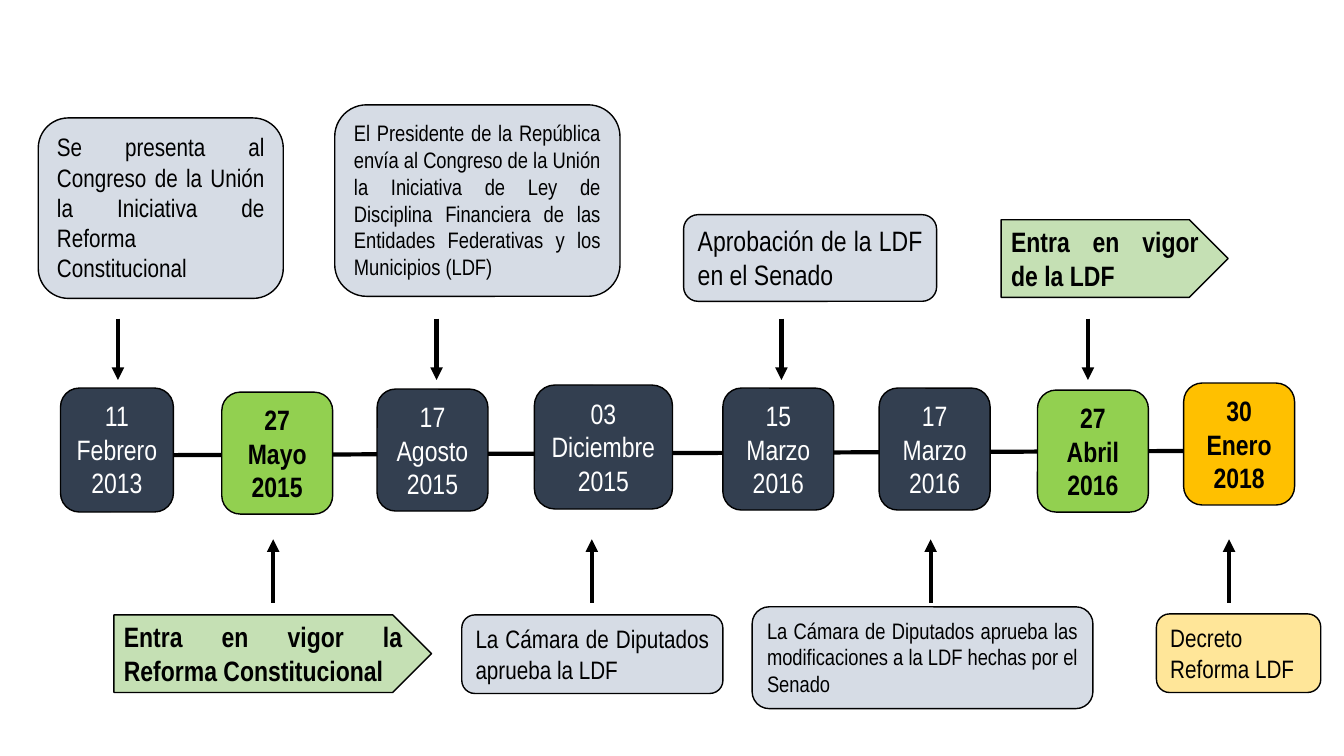
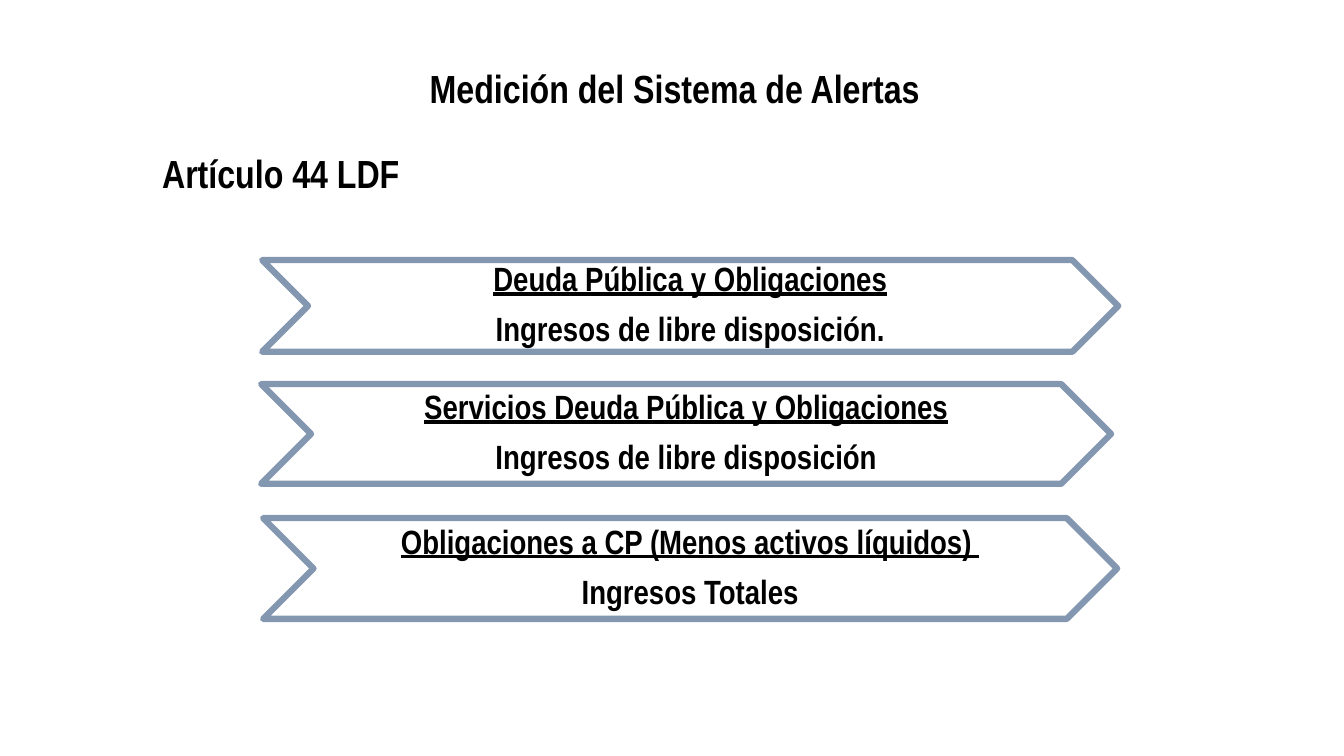
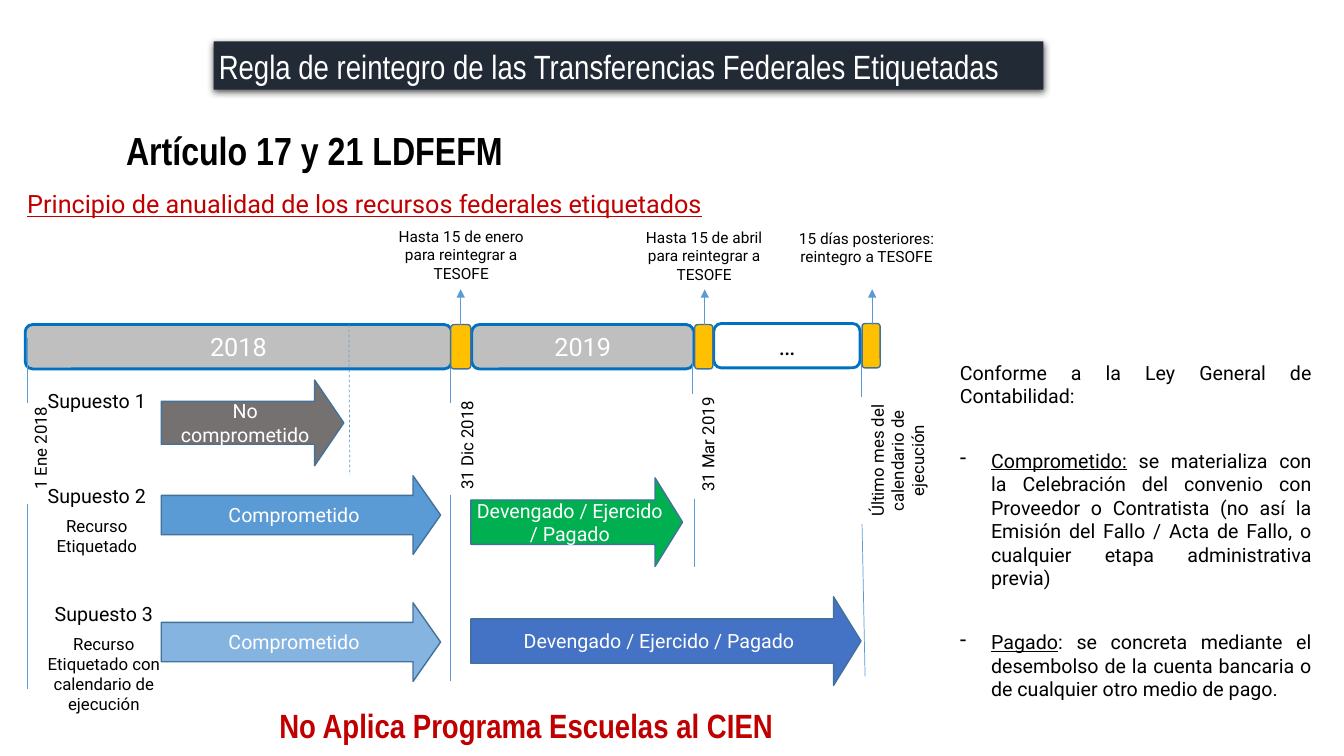
from dataclasses import dataclass, replace

from lxml import etree
from pptx import Presentation
from pptx.dml.color import RGBColor
from pptx.enum import dml, shapes, text
from pptx.oxml.ns import qn
from pptx.util import Inches, Pt

SHAPE = shapes.MSO_SHAPE
LEFT, CENTER, JUSTIFY = text.PP_ALIGN.LEFT, text.PP_ALIGN.CENTER, text.PP_ALIGN.JUSTIFY
TOP, MIDDLE = text.MSO_ANCHOR.TOP, text.MSO_ANCHOR.MIDDLE


@dataclass(frozen=True)
class Style:
    font: str
    size: float
    color: str = "000000"
    bold: bool = False
    underline: bool = False


class Theme:
    black, white, red = "000000", "FFFFFF", "C00000"
    navy, mist, green, leaf = "333F50", "D6DCE5", "92D050", "C5E0B4"
    amber, cream, steel, ink = "FFC000", "FFE699", "8497B0", "222A35"
    bar, bar_line, outline, thin_line = "BFBFBF", "0070C0", "42719B", "5B9BD5"
    gray, blue, light_blue = "767171", "5B9BD5", "84B4DF"
    vivid_green, royal = "00B050", "4472C4"

    date = Style("Arial Narrow", 20, white)
    strong = Style("Arial Narrow", 20, bold=True)
    note = Style("Arial Narrow", 18)
    heading = Style("Arial Narrow", 28, bold=True)
    formula = Style("Arial Narrow", 24, bold=True)
    banner = Style("Arial Narrow", 24, white)
    warning = Style("Arial Narrow", 24, red, bold=True)
    principle = Style("Roboto", 18, red, underline=True)
    year = Style("Roboto", 18, white)
    stage = Style("Roboto", 14, white)
    body = Style("Roboto", 14)
    small = Style("Roboto", 12)
    deadline = Style("Roboto", 11)


def rgb(color):
    return RGBColor.from_string(color)


def write(shape, lines, align=LEFT, anchor=TOP, margins=(0.1, 0.05), gap=0):
    """Fill a shape with lines, each a list of (text, style) runs; gap is the space before."""
    frame = shape.text_frame
    frame.word_wrap = True
    frame.vertical_anchor = anchor
    frame.margin_left = frame.margin_right = Inches(margins[0])
    frame.margin_top = frame.margin_bottom = Inches(margins[1])
    for index, runs in enumerate(lines):
        paragraph = frame.paragraphs[0] if index == 0 else frame.add_paragraph()
        paragraph.alignment = align
        if index and gap:
            paragraph.space_before = Pt(gap)
        for words, style in runs:
            run = paragraph.add_run()
            run.text = words
            run.font.name, run.font.size = style.font, Pt(style.size)
            run.font.bold, run.font.underline = style.bold, style.underline
            run.font.color.rgb = rgb(style.color)


def add_box(slide, kind, box, fill=None, line=None, width=1):
    shape = slide.shapes.add_shape(kind, *map(Inches, box))
    shape.shadow.inherit = False
    if fill:
        shape.fill.solid()
        shape.fill.fore_color.rgb = rgb(fill)
    else:
        shape.fill.background()
    if line:
        shape.line.color.rgb = rgb(line)
        shape.line.width = Pt(width)
    else:
        shape.line.fill.background()
    return shape


def add_label(slide, box, lines, align=LEFT, anchor=TOP, margins=(0.05, 0.05), gap=0, rotation=0):
    label = slide.shapes.add_textbox(*map(Inches, box))
    label.rotation = rotation
    write(label, lines, align, anchor, margins, gap)
    return label


def add_line(slide, start, end, color, width, arrow=False, dashed=False):
    line = slide.shapes.add_connector(
        shapes.MSO_CONNECTOR.STRAIGHT, *map(Inches, (*start, *end)))
    line.line.color.rgb = rgb(color)
    line.line.width = Pt(width)
    if dashed:
        line.line.dash_style = dml.MSO_LINE.DASH
    if arrow:
        etree.SubElement(line.line._get_or_add_ln(), qn("a:tailEnd"), type="triangle")
    etree.SubElement(line._element.spPr, qn("a:effectLst"))


def add_drop_shadow(shape):
    effects = shape._element.spPr.find(qn("a:effectLst"))
    shadow = etree.SubElement(effects, qn("a:outerShdw"), blurRad=str(Pt(5)),
                              dist=str(Pt(1.5)), dir="5400000", rotWithShape="0")
    color = etree.SubElement(shadow, qn("a:srgbClr"), val=Theme.black)
    etree.SubElement(color, qn("a:alpha"), val="63000")


def add_dash_bullet(paragraph, indent):
    properties = paragraph._p.get_or_add_pPr()
    properties.set("marL", str(Inches(indent)))
    properties.set("indent", str(-Inches(indent)))
    etree.SubElement(properties, qn("a:buChar"), char="-")


def add_event(slide, date, date_box, date_fill, note, note_box, note_fill, size, arrow_x):
    """Place a dated box, its note and the arrow from note to date."""
    milestone = date_fill != Theme.navy
    add_line_y = (3.16, 3.77) if note_box[1] < date_box[1] else (5.98, 5.35)
    dated = add_box(slide, SHAPE.ROUNDED_RECTANGLE, date_box, date_fill, Theme.black)
    write(dated, [[(date, Theme.strong if milestone else Theme.date)]], CENTER)
    in_force = note_fill == Theme.leaf
    kind = SHAPE.PENTAGON if in_force else SHAPE.ROUNDED_RECTANGLE
    noted = add_box(slide, kind, note_box, note_fill, Theme.black)
    style = Theme.strong if in_force else replace(Theme.note, size=size)
    write(noted, [[(note, style)]], JUSTIFY)
    start, end = add_line_y
    add_line(slide, (arrow_x, start), (arrow_x, end), Theme.black, 3, arrow=True)


def build_timeline(slide):
    add_line(slide, (0.6, 4.52), (12.83, 4.47), Theme.black, 3)
    events = [
        ("11 Febrero 2013", (0.6, 3.85, 1.12, 1.23), Theme.navy,
         "Se presenta al Congreso de la Unión la Iniciativa de Reforma Constitucional",
         (0.38, 1.17, 2.43, 1.79), Theme.mist, 18, 1.17),
        ("27 Mayo 2015", (2.2, 3.89, 1.1, 1.21), Theme.green,
         "Entra en vigor la Reforma Constitucional",
         (1.13, 6.1, 3.15, 0.77), Theme.leaf, 20, 2.71),
        ("17 Agosto 2015", (3.74, 3.86, 1.1, 1.21), Theme.navy,
         "El Presidente de la República envía al Congreso de la Unión la Iniciativa de Ley "
         "de Disciplina Financiera de las Entidades Federativas y los Municipios (LDF)",
         (3.32, 1.04, 2.83, 1.9), Theme.mist, 16, 4.33),
        ("03 Diciembre 2015", (5.3, 3.82, 1.37, 1.23), Theme.navy,
         "La Cámara de Diputados aprueba la LDF",
         (4.58, 6.1, 2.59, 0.78), Theme.mist, 18, 5.87),
        ("15 Marzo 2016", (7.17, 3.85, 1.1, 1.21), Theme.navy,
         "Aprobación de la LDF en el Senado",
         (6.78, 2.13, 2.51, 0.86), Theme.mist, 20, 7.75),
        ("17 Marzo 2016", (8.72, 3.85, 1.1, 1.21), Theme.navy,
         "La Cámara de Diputados aprueba las modificaciones a la LDF hechas por el Senado",
         (7.46, 6.02, 3.38, 1.01), Theme.mist, 16, 9.23),
        ("27 Abril 2016", (10.29, 3.87, 1.1, 1.21), Theme.green,
         "Entra en vigor de la LDF",
         (9.93, 2.18, 2.25, 0.77), Theme.leaf, 20, 10.79),
        ("30 Enero 2018", (11.74, 3.8, 1.1, 1.21), Theme.amber,
         "Decreto Reforma LDF",
         (11.47, 6.09, 1.63, 0.78), Theme.cream, 18, 12.19),
    ]
    for event in events:
        add_event(slide, *event)


def build_alert_measures(slide):
    add_label(slide, (2.59, 0.56, 8.2, 0.63),
              [[("Medición del Sistema de Alertas", Theme.heading)]], CENTER, MIDDLE)
    add_label(slide, (1.51, 1.43, 4.13, 0.57),
              [[("Artículo 44 LDF", Theme.heading)]], margins=(0.1, 0.05))
    ratios = [
        ("Deuda Pública y Obligaciones", "Ingresos de libre disposición.",
         (2.6, 2.58, 8.49, 0.91)),
        ("Servicios Deuda Pública y Obligaciones", "Ingresos de libre disposición",
         (2.59, 3.81, 8.43, 0.99)),
        ("Obligaciones a CP (Menos activos líquidos) ", "Ingresos Totales",
         (2.61, 5.14, 8.47, 1)),
    ]
    for numerator, denominator, box in ratios:
        chevron = add_box(slide, SHAPE.CHEVRON, box, line=Theme.steel, width=4.5)
        write(chevron, [[(numerator, replace(Theme.formula, underline=True))],
                        [(denominator, Theme.formula)]], CENTER, MIDDLE, (0.02, 0.02))
        for paragraph in chevron.text_frame.paragraphs:
            paragraph.line_spacing = 0.9
            paragraph.space_after = Pt(9.6)


def add_period_bars(slide):
    periods = [("2018", (0.25, 3.22, 4.23, 0.44), Theme.bar, Theme.white),
               ("2019", (4.68, 3.22, 2.2, 0.44), Theme.bar, Theme.white),
               ("…", (7.08, 3.21, 1.45, 0.44), None, Theme.black)]
    for name, box, fill, color in periods:
        bar = add_box(slide, SHAPE.ROUNDED_RECTANGLE, box, fill, Theme.bar_line, 2)
        write(bar, [[(name, replace(Theme.year, color=color))]], CENTER, MIDDLE, (0.05, 0.05))
    ticks = [((0.27, 3.35), (0.27, 4)), ((0.27, 5), (0.27, 6.84)),
             ((4.47, 3.36), (4.47, 4)), ((4.47, 4.91), (4.47, 6.76)),
             ((6.87, 3.28), (6.87, 3.91)), ((6.89, 4.95), (6.89, 5.63)),
             ((8.54, 3.31), (8.54, 3.94)), ((8.55, 5.2), (8.58, 6.71))]
    for start, end in ticks:
        add_line(slide, start, end, Theme.thin_line, 0.5)
    dates = [("1 Ene 2018", (-0.18, 4.19, 1.15, 0.29), LEFT),
             ("31 Dic 2018", (4.05, 4.19, 1.15, 0.29), LEFT),
             ("31 Mar 2019", (6.44, 4.21, 1.15, 0.29), LEFT),
             ("Último mes del calendario de ejecución", (8.26, 4.23, 1.26, 0.68), CENTER)]
    for date, box, align in dates:
        add_label(slide, box, [[(date, Theme.small)]], align, rotation=270)


def add_deadlines(slide):
    deadlines = [
        ("Hasta 15 de enero para reintegrar a TESOFE", (3.82, 2.2, 1.51, 0.6),
         (4.47, 3.22, 0.2, 0.44), 4.57),
        ("Hasta 15 de abril para reintegrar a TESOFE", (6.23, 2.21, 1.51, 0.6),
         (6.89, 3.22, 0.18, 0.44), 6.99),
        ("15 días posteriores: reintegro a TESOFE", (7.84, 2.22, 1.51, 0.43),
         (8.55, 3.21, 0.18, 0.44), 8.65),
    ]
    for words, label_box, marker_box, arrow_x in deadlines:
        add_box(slide, SHAPE.ROUNDED_RECTANGLE, marker_box, Theme.amber, Theme.outline)
        add_line(slide, (arrow_x, 3.22), (arrow_x, 2.87), Theme.thin_line, 0.5, arrow=True)
        add_label(slide, label_box, [[(words, Theme.deadline)]], CENTER)


def add_cases(slide):
    cases = [("Supuesto 1", None, (0.35, 3.81, 1.22, 0.32)),
             ("Supuesto 2", "Recurso Etiquetado", (0.35, 4.75, 1.22, 0.79)),
             ("Supuesto 3", "Recurso Etiquetado con calendario de ejecución",
              (0.42, 5.92, 1.22, 1.18))]
    for name, detail, box in cases:
        lines = [[(name, Theme.body)]]
        if detail:
            lines.append([(detail, Theme.small)])
        add_label(slide, box, lines, CENTER, gap=6)
    stages = [
        ("No comprometido", (1.6, 3.77, 1.81, 0.85), Theme.gray, 0.34),
        ("Comprometido", (1.6, 4.72, 2.77, 0.78), Theme.blue, 0.35),
        ("Devengado / Ejercido / Pagado", (4.67, 4.74, 2.1, 0.88), Theme.vivid_green, 0.31),
        ("Comprometido", (1.6, 5.98, 2.77, 0.78), Theme.light_blue, 0.35),
        ("Devengado / Ejercido / Pagado", (4.67, 5.92, 3.87, 0.88), Theme.royal, 0.31),
    ]
    for name, box, fill, head in stages:
        arrow = add_box(slide, SHAPE.RIGHT_ARROW, box, fill, Theme.outline)
        arrow.adjustments[1] = head
        write(arrow, [[(name, Theme.stage)]], CENTER, MIDDLE, (0.05, 0.05))
    add_line(slide, (3.46, 3.22), (3.47, 4.71), Theme.thin_line, 0.5, dashed=True)


def add_definitions(slide):
    term = replace(Theme.body, underline=True)
    lines = [
        [("Conforme a la Ley General de Contabilidad:", Theme.body)],
        [("Comprometido:", term),
         (" se materializa con la Celebración del convenio con Proveedor o Contratista "
          "(no así la Emisión del Fallo / Acta de Fallo, o cualquier etapa administrativa "
          "previa)", Theme.body)],
        [("Pagado", term),
         (": se concreta mediante el desembolso de la cuenta bancaria o de cualquier otro "
          "medio de pago.", Theme.body)],
    ]
    label = add_label(slide, (9.47, 3.53, 3.59, 3.5), lines, JUSTIFY, gap=29)
    for paragraph in label.text_frame.paragraphs[1:]:
        add_dash_bullet(paragraph, 0.31)


def build_refund_rule(slide):
    banner = add_box(slide, SHAPE.RECTANGLE, (2.12, 0.41, 8.23, 0.48), Theme.ink)
    add_drop_shadow(banner)
    write(banner, [[("Regla de reintegro de las Transferencias Federales Etiquetadas",
                     Theme.banner)]], margins=(0.05, 0.05))
    add_label(slide, (1.2, 1.2, 4.15, 0.54), [[("Artículo 17 y 21 LDFEFM", Theme.heading)]])
    add_label(slide, (0.22, 1.82, 9.51, 0.68),
              [[("Principio de anualidad de los recursos federales etiquetados",
                 Theme.principle)]])
    add_period_bars(slide)
    add_deadlines(slide)
    add_cases(slide)
    add_definitions(slide)
    add_label(slide, (2.72, 6.94, 6.46, 0.48),
              [[("No Aplica Programa Escuelas al CIEN", Theme.warning)]])


def main():
    presentation = Presentation()
    presentation.slide_width, presentation.slide_height = Inches(13.33), Inches(7.5)
    for build in (build_timeline, build_alert_measures, build_refund_rule):
        build(presentation.slides.add_slide(presentation.slide_layouts[6]))
    presentation.save("out.pptx")


if __name__ == "__main__":
    main()
